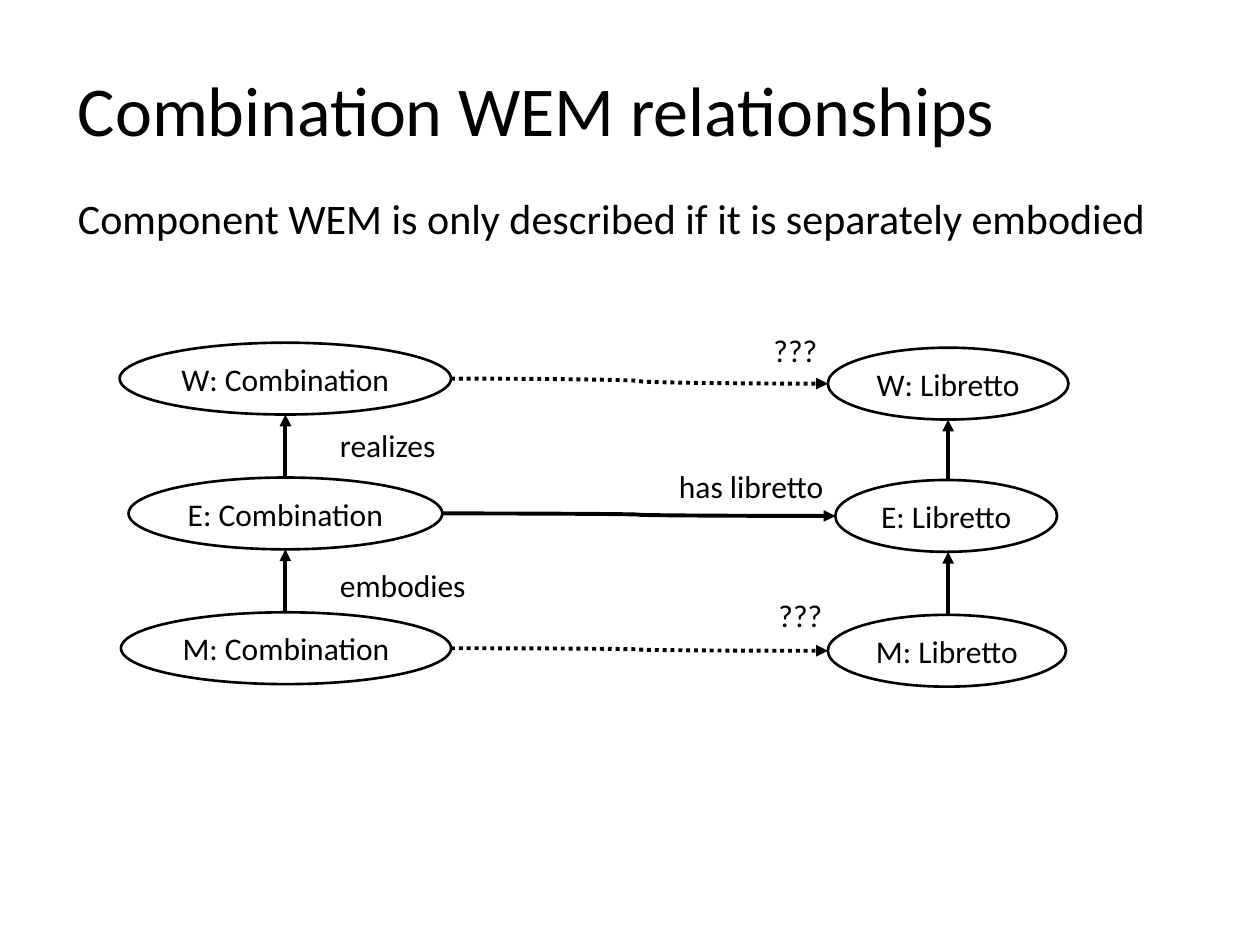
from lxml.etree import SubElement
from pptx import Presentation
from pptx.dml.color import RGBColor
from pptx.enum.dml import MSO_LINE_DASH_STYLE as DASH
from pptx.enum.shapes import MSO_CONNECTOR as CONNECTOR, MSO_SHAPE as SHAPE
from pptx.enum.text import MSO_ANCHOR as ANCHOR, MSO_AUTO_SIZE as AUTO_SIZE, PP_ALIGN as ALIGN
from pptx.oxml.ns import qn
from pptx.util import Inches, Pt

COLORS = {"ink": "000000", "paper": "FFFFFF"}
FONT = "Calibri"
ELLIPSE_HEIGHT = 0.57
COMBINATIONS = [
    ("W: Combination", 0.95, 2.72, 2.63),
    ("E: Combination", 1.02, 3.79, 2.49),
    ("M: Combination", 0.96, 4.86, 2.62),
]
LIBRETTOS = [
    ("W: Libretto", 6.57, 2.76, 1.91),
    ("E: Libretto", 6.63, 3.81, 1.76),
    ("M: Libretto", 6.57, 4.88, 1.89),
]
LINKS = [DASH.ROUND_DOT, None, DASH.ROUND_DOT]
LABELS = [
    ("realizes", 2.6, 3.33, 3.13, True),
    ("embodies", 2.6, 4.44, 3.83, True),
    ("has libretto", 5.29, 3.66, 1.37, False),
    ("???", 6.08, 4.68, 0.55, False),
    ("???", 6.04, 2.58, 0.55, True),
]


def color(name):
    """Return the named palette colour."""
    return RGBColor.from_string(COLORS[name])


def write_text(shape, text, size, wrap=False, **paragraph_format):
    """Write one formatted paragraph into a shape."""
    shape.text_frame.word_wrap = wrap
    paragraph = shape.text_frame.paragraphs[0]
    paragraph.text = text
    for name, value in paragraph_format.items():
        setattr(paragraph, name, value)
    font = paragraph.runs[0].font
    for name, value in {"name": FONT, "size": Pt(size)}.items():
        setattr(font, name, value)
    font.color.rgb = color("ink")


def add_text(slide, text, box, size, wrap=False, **paragraph_format):
    """Add a text box that fits its text."""
    shape = slide.shapes.add_textbox(*map(Inches, box))
    write_text(shape, text, size, wrap, **paragraph_format)
    shape.text_frame.auto_size = AUTO_SIZE.SHAPE_TO_FIT_TEXT


def add_entity(slide, text, left, top, width):
    """Add an outlined ellipse that names an entity."""
    shape = slide.shapes.add_shape(
        SHAPE.OVAL, *map(Inches, (left, top, width, ELLIPSE_HEIGHT)))
    shape.shadow.inherit = False
    shape.fill.background()
    shape.line.color.rgb = color("ink")
    shape.line.width = Pt(1.5)
    shape.text_frame.vertical_anchor = ANCHOR.MIDDLE
    write_text(shape, text, 18, alignment=ALIGN.CENTER)
    return shape


def add_arrow(slide, kind, start, end, dash=None):
    """Add an arrow from start to end."""
    connector = slide.shapes.add_connector(kind, *start, *end)
    connector.line.color.rgb = color("ink")
    connector.line.width = Pt(2.25)
    if dash is not None:
        connector.line.dash_style = dash
    SubElement(connector.line._get_or_add_ln(), qn("a:tailEnd"), type="triangle")
    SubElement(connector._element.spPr, qn("a:effectLst"))


def add_column(slide, entities):
    """Add a column of entities, each pointing to the one above."""
    shapes = [add_entity(slide, *entity) for entity in entities]
    center = shapes[0].left + shapes[0].width // 2
    for upper, lower in zip(shapes, shapes[1:]):
        add_arrow(slide, CONNECTOR.STRAIGHT, (center, lower.top),
                  (center, upper.top + upper.height))
    return shapes


def add_links(slide, sources, targets):
    """Link each source entity to the target in its row."""
    for source, target, dash in zip(sources, targets, LINKS):
        start = (source.left + source.width, source.top + source.height // 2)
        end = (target.left, target.top + target.height // 2)
        add_arrow(slide, CONNECTOR.CURVE, start, end, dash)


def main():
    """Build the slide and save it."""
    presentation = Presentation()
    presentation.slide_width = Inches(10)
    presentation.slide_height = Inches(7.5)
    slide = presentation.slides.add_slide(presentation.slide_layouts[6])
    slide.background.fill.solid()
    slide.background.fill.fore_color.rgb = color("paper")
    add_text(slide, "Combination WEM relationships", (0.52, 0.48, 7.56, 0.77), 40)
    add_text(slide, "Component WEM is only described if it is separately embodied",
             (0.52, 1.45, 8.75, 0.51), 24, line_spacing=1.07, space_after=Pt(8))
    combinations = add_column(slide, COMBINATIONS)
    librettos = add_column(slide, LIBRETTOS)
    add_links(slide, combinations, librettos)
    for text, left, top, width, wrap in LABELS:
        add_text(slide, text, (left, top, width, 0.4), 18, wrap)
    presentation.save("out.pptx")


if __name__ == "__main__":
    main()
